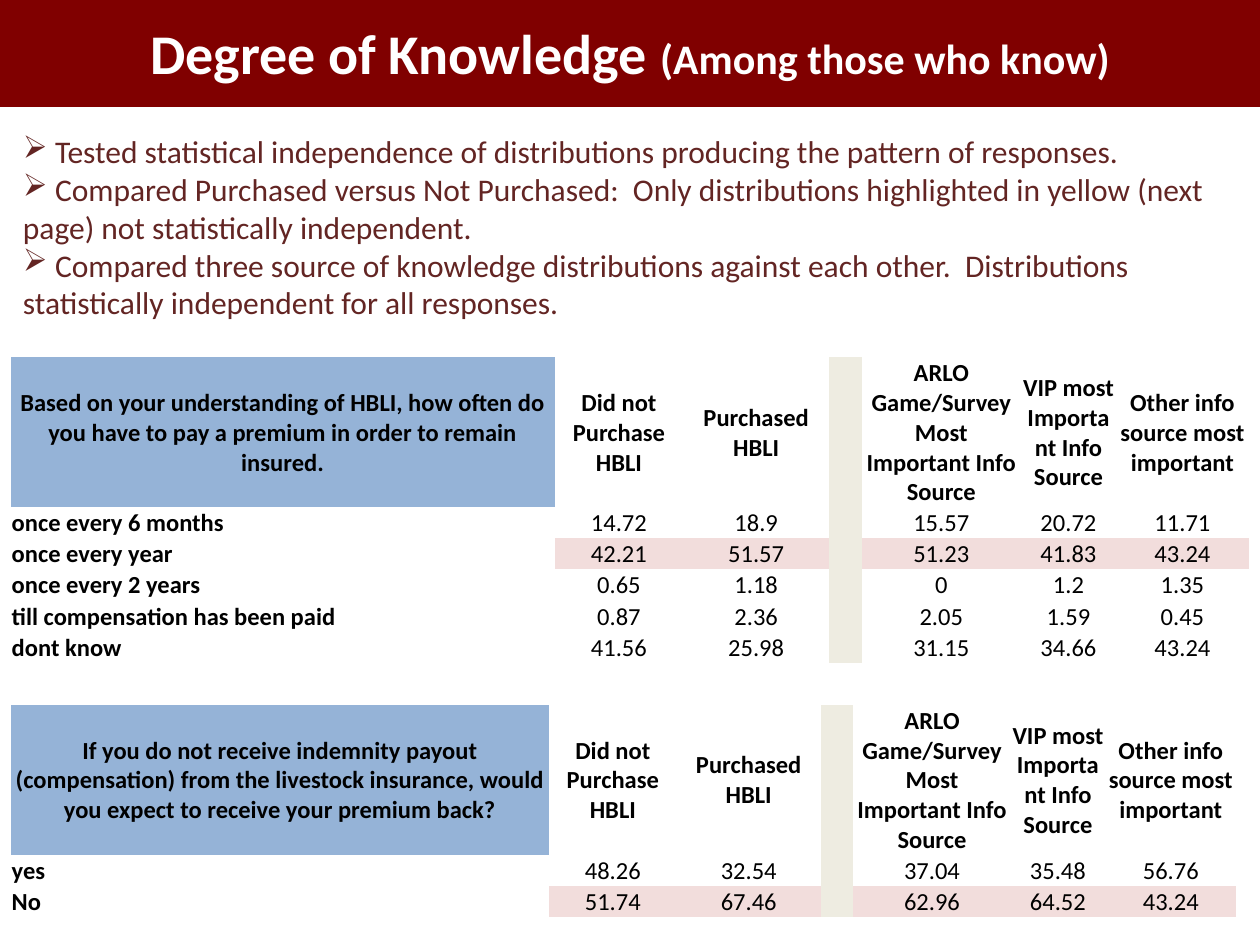
from lxml import etree
from pptx import Presentation
from pptx.dml.color import RGBColor
from pptx.enum.text import MSO_ANCHOR, MSO_AUTO_SIZE, PP_ALIGN
from pptx.oxml.ns import qn
from pptx.util import Pt

MIDDLE, BOTTOM = MSO_ANCHOR.MIDDLE, MSO_ANCHOR.BOTTOM
LEFT, CENTER = PP_ALIGN.LEFT, PP_ALIGN.CENTER
NO_FIT, GROW = MSO_AUTO_SIZE.NONE, MSO_AUTO_SIZE.SHAPE_TO_FIT_TEXT

FONT = "Calibri"
MAROON, BROWN, WHITE, BLACK = "800000", "632523", "FFFFFF", "000000"
BLUE, BEIGE, PINK = "95B3D7", "EEECE1", "F2DDDC"
PLAIN = "{2D5ABB26-0587-4C30-8999-92F81FD0307C}"  # no style, no grid

EDGE = 6
WIDTHS = [311, 73.4, 83.5, 18.7, 90.7, 54.7, 75.6]
HEAD_H, ROW_H = 85.7, 17.5
GAP_COL = 3
HEADS = ["Did not Purchase HBLI", "Purchased HBLI", "",
         "ARLO Game/Survey Most Important Info Source",
         "VIP most Important Info Source",
         "Other info source most important"]

POINTS = [
    " Tested statistical independence of distributions producing the pattern of responses.",
    " Compared Purchased versus Not Purchased:  Only distributions highlighted in yellow "
    "(next page) not statistically independent.",
    " Compared three source of knowledge distributions against each other.  "
    "Distributions statistically independent for all responses.",
]

PREMIUM = [
    ["Based on your understanding of HBLI, how often do you have to pay a premium "
     "in order to remain insured."] + HEADS,
    ["once every 6 months", "14.72", "18.9", "", "15.57", "20.72", "11.71"],
    ["once every year", "42.21", "51.57", "", "51.23", "41.83", "43.24"],
    ["once every 2 years", "0.65", "1.18", "", "0", "1.2", "1.35"],
    ["till compensation has been paid", "0.87", "2.36", "", "2.05", "1.59", "0.45"],
    ["dont know", "41.56", "25.98", "", "31.15", "34.66", "43.24"],
]
PAYOUT = [
    ["If you do not receive indemnity payout (compensation) from the livestock "
     "insurance, would you expect to receive your premium back?"] + HEADS,
    ["yes", "48.26", "32.54", "", "37.04", "35.48", "56.76"],
    ["No", "51.74", "67.46", "", "62.96", "64.52", "43.24"],
]


def paint(target, color):
    target.solid()
    target.fore_color.rgb = RGBColor.from_string(color)


def style(run, size, color, bold=False):
    run.font.name = FONT
    run.font.size = Pt(size)
    run.font.bold = bold
    run.font.color.rgb = RGBColor.from_string(color)


def add_title(slide):
    bar = slide.shapes.title
    bar.left, bar.top, bar.width, bar.height = Pt(0), Pt(0), Pt(720), Pt(60)
    paint(bar.fill, MAROON)
    paint(bar.line.fill, MAROON)
    bar.line.width = Pt(2)
    frame = bar.text_frame
    frame.text = "Degree of Knowledge "
    frame.auto_size = NO_FIT
    frame.vertical_anchor = MIDDLE
    para = frame.paragraphs[0]
    para.alignment = CENTER
    style(para.runs[0], 32, WHITE, True)
    note = para.add_run()
    note.text = "(Among those who know)"
    style(note, 24, WHITE, True)


def add_points(slide):
    box = slide.shapes.add_textbox(Pt(EDGE), Pt(72), Pt(708), Pt(116.6))
    frame = box.text_frame
    frame.word_wrap = True
    frame.auto_size = GROW
    frame.text = "\n".join(POINTS)
    for para in frame.paragraphs:
        style(para.runs[0], 18, BROWN)
        props = para._p.get_or_add_pPr()
        etree.SubElement(props, qn("a:buChar"), char="➢")


def fill_cell(cell, text, row, col, marked):
    cell.margin_left = cell.margin_right = cell.margin_top = Pt(0.7)
    cell.margin_bottom = Pt(0)
    label = col == 0 and row > 0
    cell.vertical_anchor = BOTTOM if label else MIDDLE
    cell.text = text
    para = cell.text_frame.paragraphs[0]
    para.alignment = LEFT if label else CENTER
    for run in para.runs:
        style(run, 14, BLACK, row == 0 or col == 0)
    if not text:  # keeps the empty cell from stretching its row
        etree.SubElement(para._p, qn("a:endParaRPr"), sz="1400")

    if col == GAP_COL:
        paint(cell.fill, BEIGE)
    elif row == 0 and col == 0:
        paint(cell.fill, BLUE)
    elif row == marked and col > 0:
        paint(cell.fill, PINK)
    else:
        cell.fill.background()


def add_grid(slide, rows, top, marked, scale=1):
    widths = [w * scale for w in WIDTHS]
    heights = [HEAD_H] + [ROW_H] * (len(rows) - 1)
    table = slide.shapes.add_table(len(rows), len(widths), Pt(EDGE), Pt(top),
                                   Pt(sum(widths)), Pt(sum(heights))).table
    table.first_row = table.horz_banding = False
    table._tbl.tblPr.find(qn("a:tableStyleId")).text = PLAIN
    for column, width in zip(table.columns, widths):
        column.width = Pt(width)
    for line, height in zip(table.rows, heights):
        line.height = Pt(height)
    for r, row in enumerate(rows):
        for c, text in enumerate(row):
            fill_cell(table.cell(r, c), text, r, c, marked)


def main():
    deck = Presentation()
    deck.slide_width, deck.slide_height = Pt(720), Pt(540)
    slide = deck.slides.add_slide(deck.slide_layouts[5])
    # Heading bar
    add_title(slide)
    # Survey answers
    add_grid(slide, PREMIUM, 204, marked=2)
    add_grid(slide, PAYOUT, 402.7, marked=2, scale=0.99)
    # Findings
    add_points(slide)
    deck.save("out.pptx")


if __name__ == "__main__":
    main()
